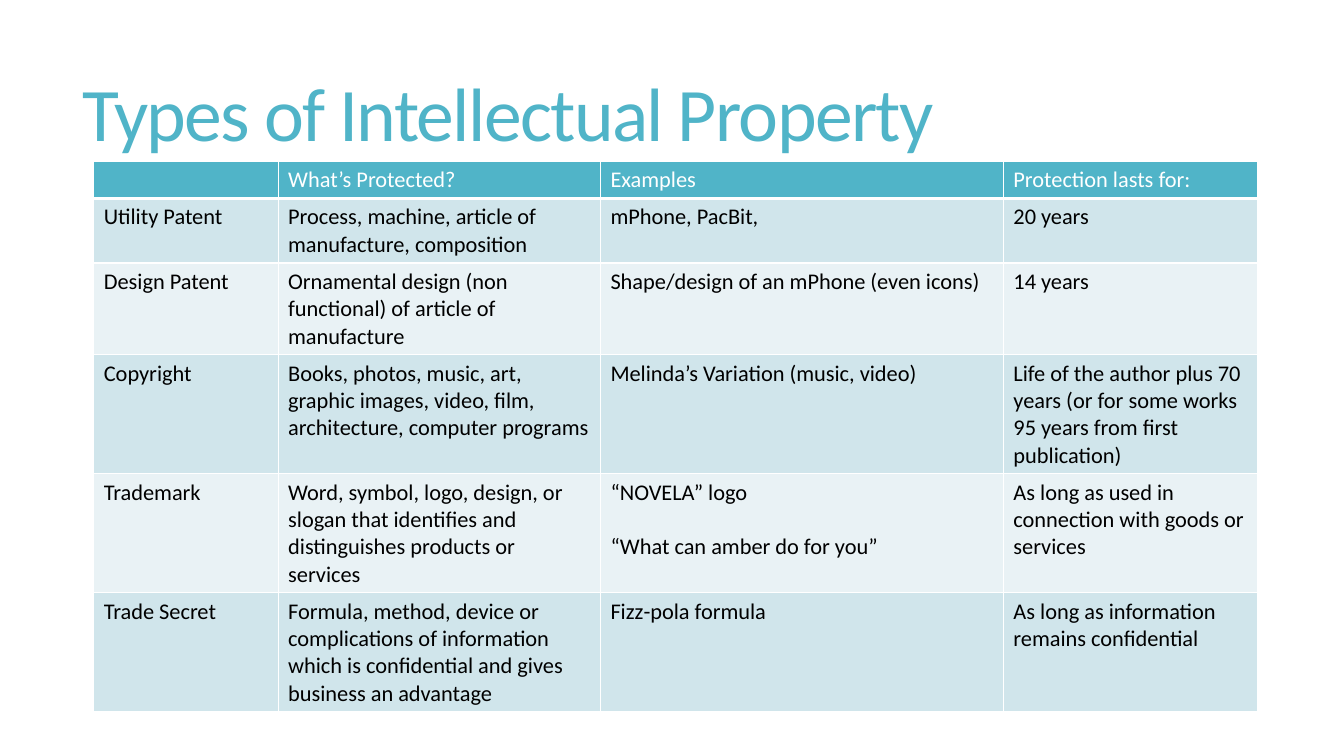
import dataclasses

import lxml.etree
import pptx
import pptx.dml.color
import pptx.enum.text
import pptx.oxml.ns
import pptx.util

Inches = pptx.util.Inches
Pt = pptx.util.Pt


@dataclasses.dataclass(frozen=True)
class Theme:
    font: str = "Calibri"
    accent: str = "50B4C8"
    white: str = "FFFFFF"
    black: str = "000000"
    bands: tuple = ("D0E5EB", "E9F2F5")
    title_size: int = 54
    table_size: int = 16
    title_spacing: int = -120
    rule: int = 1
    header_rule: int = 3


THEME = Theme()
COLUMN_WIDTHS = (1.83, 3.2, 4, 2.52)
ROW_LINES = (1, 2, 3, 4, 4, 4)
LINE_HEIGHT = 0.27
CELL_PADDING = 0.1

TITLE = "Types of Intellectual Property"
ROWS = (
    ("", "What’s Protected?", "Examples", "Protection lasts for:"),
    ("Utility Patent", "Process, machine, article of manufacture, composition",
     "mPhone, PacBit,", "20 years"),
    ("Design Patent", "Ornamental design (non functional) of article of manufacture",
     "Shape/design of an mPhone (even icons)", "14 years"),
    ("Copyright",
     "Books, photos, music, art, graphic images, video, film, architecture, computer programs",
     "Melinda’s Variation (music, video)",
     "Life of the author plus 70 years (or for some works 95 years from first publication)"),
    ("Trademark",
     "Word, symbol, logo, design, or slogan that identifies and distinguishes products or services",
     "“NOVELA” logo\n“What can amber do for you”",
     "As long as used in connection with goods or services"),
    ("Trade Secret",
     "Formula, method, device or complications of information which is confidential "
     "and gives business an advantage",
     "Fizz-pola formula", "As long as information remains confidential"),
)


def rgb(value):
    return pptx.dml.color.RGBColor.from_string(value)


def apply(target, values):
    for name, value in values.items():
        setattr(target, name, value)


def style_font(font, size, color):
    apply(font, {"name": THEME.font, "size": Pt(size), "bold": False})
    font.color.rgb = rgb(color)


def add_borders(cell, bottom):
    properties = cell._tc.get_or_add_tcPr()
    widths = {"lnL": THEME.rule, "lnR": THEME.rule, "lnT": THEME.rule, "lnB": bottom}
    for index, (edge, width) in enumerate(widths.items()):
        line = lxml.etree.Element(pptx.oxml.ns.qn(f"a:{edge}"), w=str(int(Pt(width))))
        fill = lxml.etree.SubElement(line, pptx.oxml.ns.qn("a:solidFill"))
        lxml.etree.SubElement(fill, pptx.oxml.ns.qn("a:srgbClr"), val=THEME.white)
        properties.insert(index, line)


def add_title(page, left, top, width, height):
    box = page.shapes.add_textbox(Inches(left), Inches(top), Inches(width), Inches(height))
    apply(box.text_frame, {
        "word_wrap": True,
        "vertical_anchor": pptx.enum.text.MSO_ANCHOR.MIDDLE,
    })
    para = box.text_frame.paragraphs[0]
    para.line_spacing = 0.85
    span = para.add_run()
    span.text = TITLE
    style_font(span.font, THEME.title_size, THEME.accent)
    span.font._element.set("spc", str(THEME.title_spacing))


def fill_cell(cell, text, is_header, band):
    add_borders(cell, THEME.header_rule if is_header else THEME.rule)
    cell.fill.solid()
    cell.fill.fore_color.rgb = rgb(THEME.accent if is_header else band)
    cell.text_frame.text = text
    color = THEME.white if is_header else THEME.black
    for index, para in enumerate(cell.text_frame.paragraphs):
        if index:
            para.space_before = Inches(LINE_HEIGHT)
        for target in (para, *para.runs):
            style_font(target.font, THEME.table_size, color)


def add_property_table(page, left, top, width, height):
    frame = page.shapes.add_table(len(ROWS), len(COLUMN_WIDTHS), Inches(left), Inches(top),
                                  Inches(width), Inches(height))
    table = frame.table
    apply(table, {"first_row": False, "horz_banding": False})
    for column, share in zip(table.columns, COLUMN_WIDTHS):
        column.width = Inches(width * share / sum(COLUMN_WIDTHS))
    for row_index, (row, lines, texts) in enumerate(zip(table.rows, ROW_LINES, ROWS)):
        row.height = Inches(CELL_PADDING + LINE_HEIGHT * lines)
        band = THEME.bands[(row_index - 1) % len(THEME.bands)]
        for cell, text in zip(row.cells, texts):
            fill_cell(cell, text, row_index == 0, band)


def main():
    deck = pptx.Presentation()
    apply(deck, {"slide_width": Inches(13.33), "slide_height": Inches(7.5)})
    page = deck.slides.add_slide(deck.slide_layouts[6])
    add_title(page, 0.72, 0.55, 11.78, 1.25)
    add_property_table(page, 0.93, 1.6, 11.54, 5.46)
    deck.save("out.pptx")


if __name__ == "__main__":
    main()
